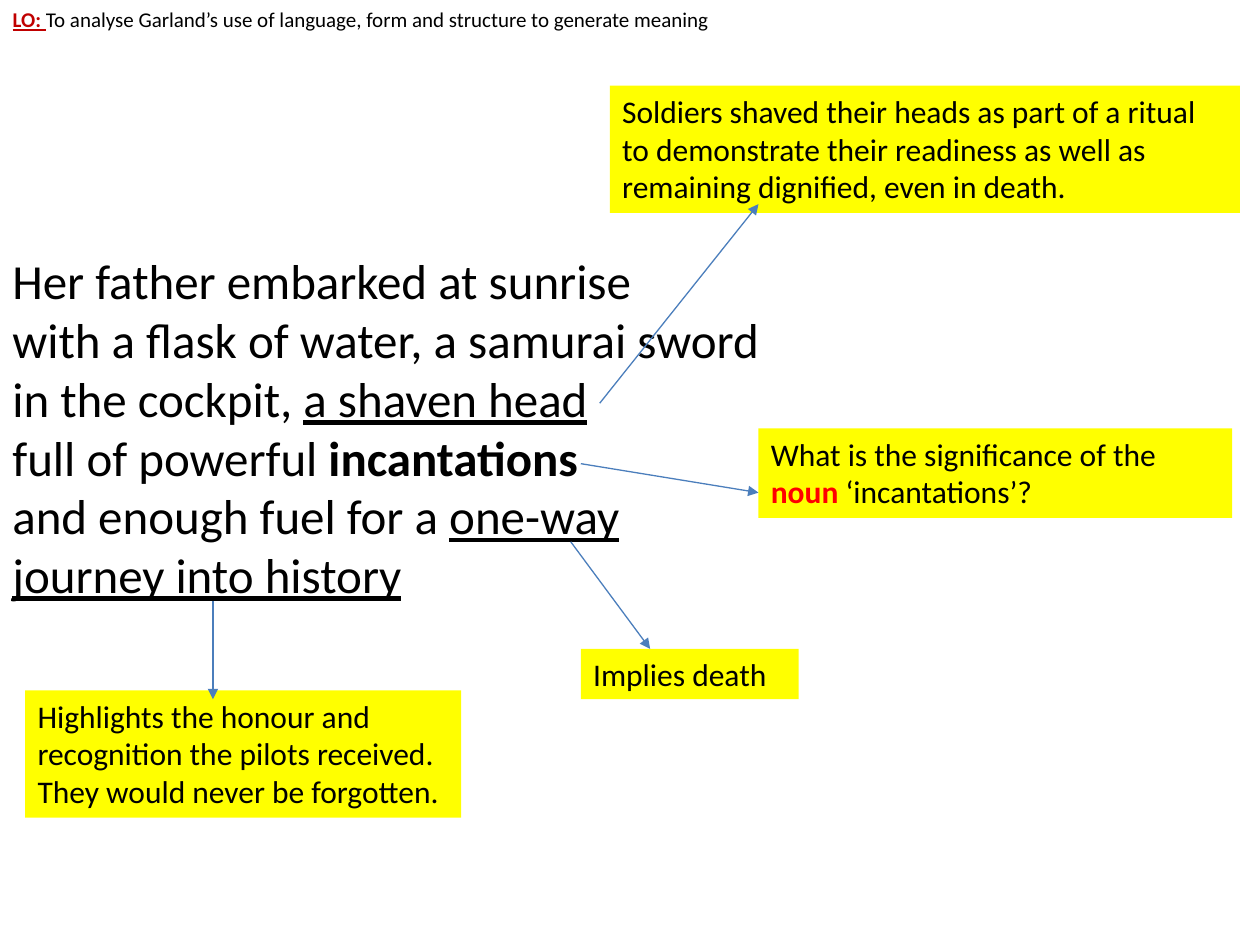
from typing import NamedTuple

from lxml.etree import SubElement
from pptx import Presentation
from pptx.dml.color import RGBColor
from pptx.enum.shapes import MSO_CONNECTOR, MSO_SHAPE
from pptx.enum.text import MSO_ANCHOR, MSO_AUTO_SIZE, PP_ALIGN
from pptx.oxml.ns import qn
from pptx.util import Inches, Pt

# Grid: 100 columns by 75 rows, each cell a tenth of an inch
CELL = Inches(0.1)
COLS, ROWS = 100, 75
FONT = "Calibri"
BLACK, WHITE, YELLOW = "000000", "FFFFFF", "FFFF00"
RED, DARK_RED, BLUE = "FF0000", "C00000", "4B7EBC"


class Span(NamedTuple):
    text: str
    color: str = BLACK
    bold: bool = False
    underline: bool = False


class Box(NamedTuple):
    col: float
    row: float
    cols: float
    rows: float


class Note(NamedTuple):
    box: Box
    spans: list[Span]


class Arrow(NamedTuple):
    start: tuple[float, float]
    end: tuple[float, float]


def rgb(color: str) -> RGBColor:
    return RGBColor.from_string(color)


def grid(*cells: float) -> list[int]:
    return [round(c * CELL) for c in cells]


def fill_solid(sp, color: str, alpha: int = 100) -> None:
    sp.fill.solid()
    sp.fill.fore_color.rgb = rgb(color)
    if alpha < 100:
        clr = sp._element.spPr.find(qn("a:solidFill"))[0]
        SubElement(clr, qn("a:alpha")).set("val", str(alpha * 1000))


def write(sp, lines: list[list[Span]], size: float) -> None:
    tf = sp.text_frame
    tf.word_wrap = True
    tf.auto_size = MSO_AUTO_SIZE.NONE
    tf.vertical_anchor = MSO_ANCHOR.TOP
    p = tf.paragraphs[0]
    p.alignment = PP_ALIGN.LEFT
    for i, line in enumerate(lines):
        if i:
            p.add_line_break()
        for span in line:
            r = p.add_run()
            r.text = span.text
            r.font.name, r.font.size = FONT, Pt(size)
            r.font.bold, r.font.underline = span.bold, span.underline
            r.font.color.rgb = rgb(span.color)


def add_box(s, box: Box, lines: list[list[Span]], size: float,
            color: str, alpha: int = 100) -> None:
    sp = s.shapes.add_shape(MSO_SHAPE.RECTANGLE, *grid(*box))
    sp.shadow.inherit = False
    sp.line.fill.background()
    fill_solid(sp, color, alpha)
    write(sp, lines, size)


def add_arrow(s, arrow: Arrow) -> None:
    cx = s.shapes.add_connector(MSO_CONNECTOR.STRAIGHT,
                                *grid(*arrow.start, *arrow.end))
    cx.line.color.rgb = rgb(BLUE)
    cx.line.width = Pt(0.75)
    SubElement(cx.line._get_or_add_ln(), qn("a:tailEnd")).set("type", "triangle")
    SubElement(cx._element.spPr, qn("a:effectLst"))


OBJECTIVE = [
    Span("LO: ", DARK_RED, bold=True, underline=True),
    Span("To analyse Garland’s use of language, form and structure to generate meaning"),
]

POEM = [
    [Span("Her father embarked at sunrise")],
    [Span("with a flask of water, a samurai sword")],
    [Span("in the cockpit, "), Span("a shaven head", underline=True)],
    [Span("full of powerful "), Span("incantations", bold=True)],
    [Span("and enough fuel for a "), Span("one-way", underline=True)],
    [Span("journey into history", underline=True)],
]

NOTES = [
    Note(Box(48.4, 6.8, 50, 10.1), [Span(
        "Soldiers shaved their heads as part of a ritual to demonstrate their "
        "readiness as well as remaining dignified, even in death.")]),
    Note(Box(60.2, 34, 37.6, 7.1), [
        Span("What is the significance of the "),
        Span("noun ", RED, bold=True),
        Span("‘incantations’?")]),
    Note(Box(2, 54.8, 34.6, 10.1), [Span(
        "Highlights the honour and recognition the pilots received. "
        "They would never be forgotten.")]),
    Note(Box(46.1, 51.5, 17.3, 4), [Span("Implies death")]),
]

ARROWS = [
    Arrow((47.6, 32), (60.2, 16.2)),
    Arrow((46.1, 36.8), (60.2, 39.1)),
    Arrow((45.3, 43), (51.6, 51.5)),
    Arrow((16.9, 47.7), (16.9, 55.5)),
]


def main() -> None:
    prs = Presentation()
    prs.slide_width, prs.slide_height = grid(COLS, ROWS)
    s = prs.slides.add_slide(prs.slide_layouts[5])

    # Learning objective, with a hanging indent
    title = s.shapes.title
    title.left, title.top, title.width, title.height = grid(0, 0, COLS, 3)
    fill_solid(title, WHITE, 88)
    write(title, [OBJECTIVE], 12)
    pPr = title.text_frame.paragraphs[0]._p.get_or_add_pPr()
    pPr.set("marL", str(Inches(0.31)))
    pPr.set("indent", str(-Inches(0.31)))

    # Poem extract
    add_box(s, Box(0, 19.4, COLS, 29.3), POEM, 28, WHITE, 88)

    # Annotations and the arrows leading to them
    for note in NOTES:
        add_box(s, note.box, [note.spans], 18, YELLOW)
    for arrow in ARROWS:
        add_arrow(s, arrow)

    prs.save("out.pptx")


if __name__ == "__main__":
    main()
